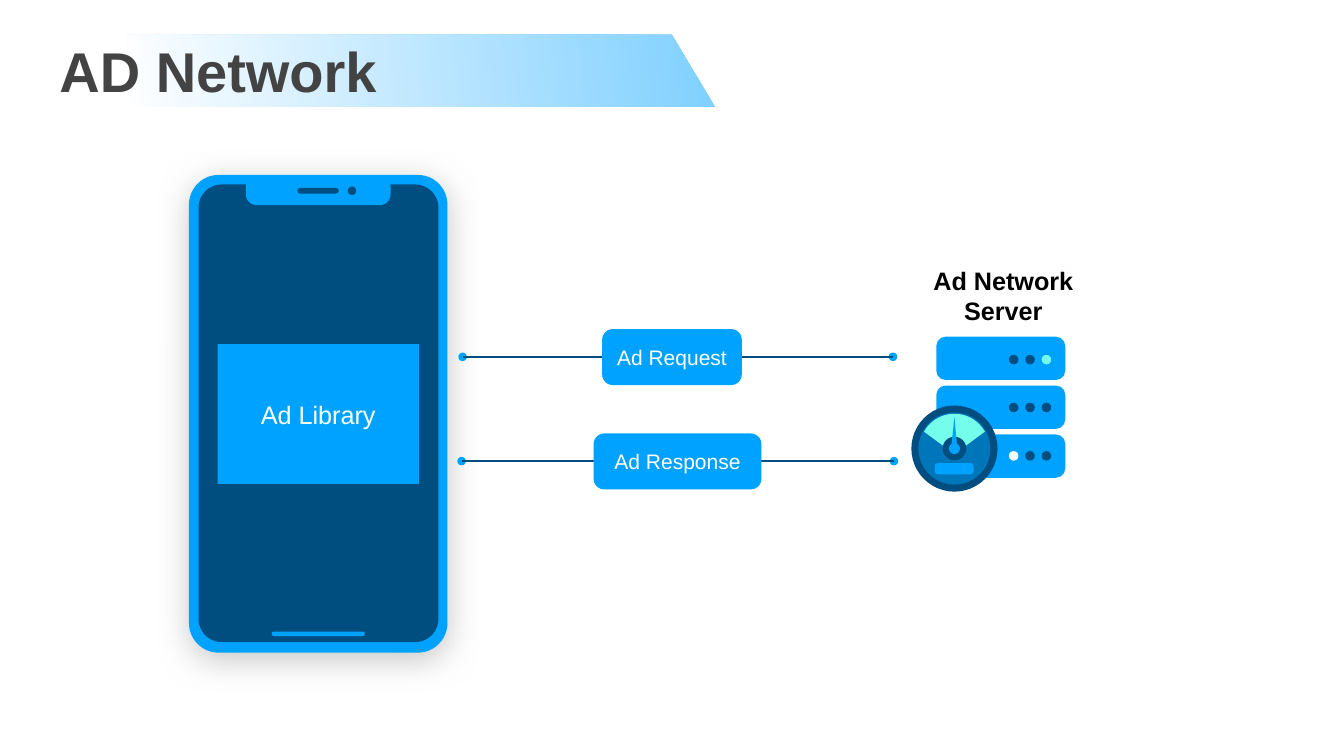
import math
from lxml import etree
from pptx import Presentation
from pptx import util as u
from pptx.dml.color import RGBColor
from pptx.enum import shapes, text
from pptx.oxml.ns import qn

BLUE = RGBColor(0x00, 0xA2, 0xFF)
NAVY = RGBColor(0x00, 0x4D, 0x80)
CAMERA = RGBColor(0x05, 0x4F, 0x80)
MID_BLUE = RGBColor(0x00, 0x76, 0xBA)
MINT = RGBColor(0x73, 0xFD, 0xEA)
WHITE = RGBColor(0xFF, 0xFF, 0xFF)
BLACK = RGBColor(0x00, 0x00, 0x00)
GREY = RGBColor(0x43, 0x43, 0x43)
FONT = "Arial"

ROUND = shapes.MSO_SHAPE.ROUNDED_RECTANGLE
OVAL = shapes.MSO_SHAPE.OVAL
RECT = shapes.MSO_SHAPE.RECTANGLE

# Content: left, top, width, height in inches
TITLE = "AD Network"
LIBRARY = "Ad Library"
SERVER = ["Ad Network", "Server"]
PHONE_PARTS = [
    (ROUND, (3.75, 3.47, 5.13, 9.48), BLUE, 0.115),  # body
    (ROUND, (3.94, 3.66, 4.76, 9.08), NAVY, 0.097),  # screen
    (ROUND, (4.88, 3.48, 2.87, 0.59), BLUE, 0.364),  # notch
    (ROUND, (5.9, 3.73, 0.82, 0.11), NAVY, 0.5),     # speaker
    (OVAL, (6.9, 3.7, 0.17, 0.17), CAMERA, None),
    (ROUND, (5.39, 12.53, 1.85, 0.09), BLUE, 0.5),   # home bar
]
# Top of each server unit, top of its lights, light colours
SERVER_UNITS = [
    (6.68, 7.04, (NAVY, NAVY, MINT)),
    (7.65, 7.99, (NAVY, NAVY, NAVY)),
    (8.62, 8.95, (WHITE, NAVY, NAVY)),
]
GAUGE_X, GAUGE_Y = 18.94, 8.9
# Label, line start, middle and end, line height, box left and width
MESSAGES = [
    ("Ad Request", 9.18, 13.33, 17.72, 7.08, 11.95, 2.77),
    ("Ad Response", 9.16, 13.45, 17.74, 9.15, 11.78, 3.33),
]

deck = Presentation()
deck.slide_width, deck.slide_height = u.Inches(26.67), u.Inches(15)
page = deck.slides.add_slide(deck.slide_layouts[6])


def paint(shape, color):
    shape.shadow.inherit = False
    shape.fill.solid()
    shape.fill.fore_color.rgb = color
    shape.line.fill.background()
    return shape


def add_part(parent, kind, place, color, corner=None):
    shape = parent.shapes.add_shape(kind, *map(u.Inches, place))
    if corner is not None:
        shape.adjustments[0] = corner
    return paint(shape, color)


def add_disc(parent, x, y, size, color):
    add_part(parent, OVAL, (x - size / 2, y - size / 2, size, size), color)


def add_outline(parent, points, color):
    points = [(u.Inches(x), u.Inches(y)) for x, y in points]
    builder = parent.shapes.build_freeform(*points[0])
    builder.add_line_segments(points[1:], close=True)
    return paint(builder.convert_to_shape(), color)


def write(shape, lines, size, color, bold=False, margin=0.06,
          align=text.PP_ALIGN.CENTER, wrap=True):
    frame = shape.text_frame
    frame.word_wrap = wrap
    frame.vertical_anchor = text.MSO_ANCHOR.MIDDLE
    frame.margin_left = frame.margin_right = u.Inches(margin)
    frame.margin_top = frame.margin_bottom = u.Inches(margin)
    frame.text = "\n".join(lines)
    for para in frame.paragraphs:
        para.alignment = align
        para.font.name, para.font.size = FONT, u.Pt(size)
        para.font.bold, para.font.color.rgb = bold, color


def add_alpha(color_element, percent):
    etree.SubElement(color_element, qn("a:alpha"), val=str(percent * 1000))


# Title band and title
band = add_outline(page, [(2.53, 0.69), (13.33, 0.69), (14.19, 2.12), (2.53, 2.12)], BLUE)
band.fill.gradient()
band.fill.gradient_angle = 186
for stop, color in zip(band.fill.gradient_stops, (BLUE, WHITE)):
    stop.color.rgb = color
for color_element in band.element.spPr.iter(qn("a:srgbClr")):
    add_alpha(color_element, 50)
title = page.shapes.add_textbox(*map(u.Inches, (1.12, 0.68, 18.54, 1.43)))
write(title, [TITLE], 80, GREY, bold=True, align=text.PP_ALIGN.LEFT)

# Phone, with a soft shadow under its body
phone = page.shapes.add_group_shape()
body, *_ = [add_part(phone, *part) for part in PHONE_PARTS]
effects = body.element.spPr.find(qn("a:effectLst"))
shadow = etree.SubElement(effects, qn("a:outerShdw"), blurRad=str(u.Pt(47)),
                          dist=str(u.Pt(10)), dir="5400000", rotWithShape="0")
add_alpha(etree.SubElement(shadow, qn("a:srgbClr"), val="929292"), 50)
library = add_part(page, RECT, (4.32, 6.83, 3.99, 2.77), BLUE)
write(library, [LIBRARY], 36, WHITE)

# Server units and their lights
server = page.shapes.add_group_shape()
for top, _, _ in SERVER_UNITS:
    add_part(server, ROUND, (18.58, top, 2.56, 0.86), BLUE, 0.216)
for _, top, colors in SERVER_UNITS:
    for column, color in enumerate(colors):
        add_part(server, OVAL, (20.02 + 0.325 * column, top, 0.19, 0.19), color)

# Gauge in front of the server
add_disc(server, GAUGE_X, GAUGE_Y, 1.71, NAVY)
add_disc(server, GAUGE_X, GAUGE_Y, 1.43, MID_BLUE)
angles = [math.radians(degree) for degree in range(209, 332, 2)]
arc = [(GAUGE_X + 0.69 * math.cos(a), GAUGE_Y + 0.69 * math.sin(a)) for a in angles]
add_outline(server, arc + [(GAUGE_X, 9.01)], MINT)
add_disc(server, GAUGE_X, GAUGE_Y, 0.47, NAVY)
add_disc(server, GAUGE_X, GAUGE_Y, 0.22, BLUE)
add_outline(server, [(GAUGE_X, 8.27), (19, 8.94), (18.87, 8.94)], BLUE)
add_part(server, ROUND, (18.55, 9.19, 0.77, 0.22), BLUE, 0.272)

# Server label
label = page.shapes.add_textbox(*map(u.Inches, (18.37, 5.2, 3.08, 1.32)))
write(label, SERVER, 36, BLACK, bold=True, wrap=False)
label.text_frame.auto_size = text.MSO_AUTO_SIZE.SHAPE_TO_FIT_TEXT

# Messages between phone and server
for name, start, middle, end, y, left, width in MESSAGES:
    for x in (start, end):
        add_disc(page, x, y, 0.17, BLUE)
    for x1, x2 in ((start, middle), (middle, end)):
        line = page.shapes.add_connector(
            shapes.MSO_CONNECTOR.STRAIGHT, *map(u.Inches, (x1, y, x2, y)))
        line.line.color.rgb, line.line.width = NAVY, u.Pt(2)
        etree.SubElement(line.element.spPr, qn("a:effectLst"))
    box = add_part(page, ROUND, (left, y - 0.55, width, 1.11), BLUE, 0.188)
    write(box, [name], 30, WHITE, margin=0)

deck.save("out.pptx")
